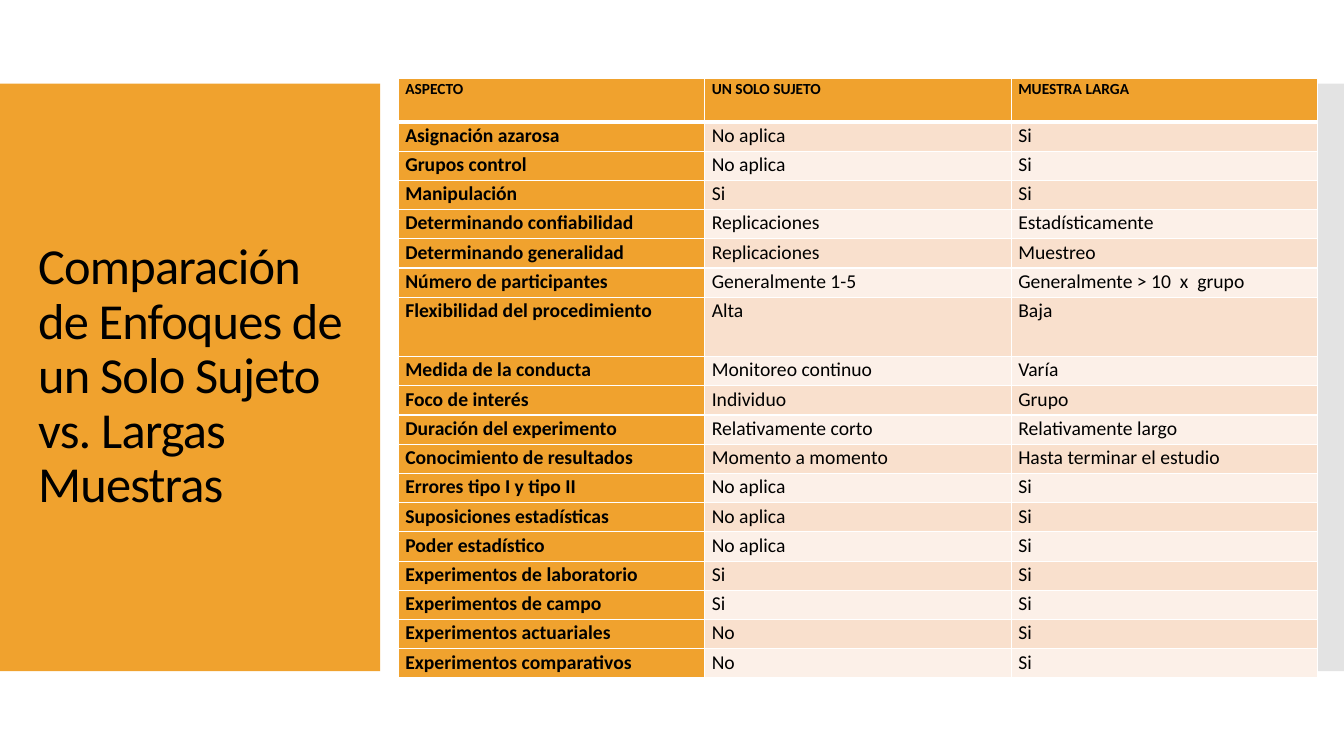
from lxml import etree
from pptx import Presentation
from pptx.dml.color import RGBColor
from pptx.enum.shapes import MSO_SHAPE
from pptx.enum.text import MSO_ANCHOR
from pptx.oxml.ns import qn
from pptx.util import Emu, Pt

RECT = MSO_SHAPE.RECTANGLE
MIDDLE = MSO_ANCHOR.MIDDLE
TOP = MSO_ANCHOR.TOP
PX = 9144
BLANK = 6

TITLE = "Comparación de Enfoques de un Solo Sujeto vs. Largas Muestras"
ROWS = [
    ("ASPECTO", "UN SOLO SUJETO", "MUESTRA LARGA"),
    ("Asignación azarosa", "No aplica", "Si"),
    ("Grupos control", "No aplica", "Si"),
    ("Manipulación", "Si", "Si"),
    ("Determinando confiabilidad", "Replicaciones", "Estadísticamente"),
    ("Determinando generalidad", "Replicaciones", "Muestreo"),
    ("Número de participantes", "Generalmente 1-5", "Generalmente > 10  x  grupo"),
    ("Flexibilidad del procedimiento", "Alta", "Baja"),
    ("Medida de la conducta", "Monitoreo continuo", "Varía"),
    ("Foco de interés", "Individuo", "Grupo"),
    ("Duración del experimento", "Relativamente corto", "Relativamente largo"),
    ("Conocimiento de resultados", "Momento a momento", "Hasta terminar el estudio"),
    ("Errores tipo I y tipo II", "No aplica", "Si"),
    ("Suposiciones estadísticas", "No aplica", "Si"),
    ("Poder estadístico", "No aplica", "Si"),
    ("Experimentos de laboratorio", "Si", "Si"),
    ("Experimentos de campo", "Si", "Si"),
    ("Experimentos actuariales", "No", "Si"),
    ("Experimentos comparativos", "No", "Si"),
]
HEADER_HEIGHT, ROW_HEIGHT, TALL_HEIGHT = 43, 29, 59
TALL_ROW = 7


def px(n):
    return Emu(n * PX)


def rgb(code):
    return RGBColor.from_string(code)


def write(tf, text, font, color, size, bold=False, line=1.0, after=0, spacing=None):
    p = tf.paragraphs[0]
    p.line_spacing = line
    p.space_after = Pt(after)
    r = p.add_run()
    r.text = text
    r.font.name = font
    r.font.size = Pt(size)
    r.font.bold = bold
    r.font.color.rgb = rgb(color)
    if spacing is not None:
        r.font._element.set("spc", str(spacing))


class Deck:
    font = "Calibri"
    ink = "000000"
    accent = "F0A22E"
    edge = "FFFFFF"
    bands = ("FCF0E8", "F9E0CD")

    def __init__(self, prs):
        self.s = prs.slides.add_slide(prs.slide_layouts[BLANK])

    def panel(self, x, y, w, h, color, opacity=100):
        sp = self.s.shapes.add_shape(RECT, px(x), px(y), px(w), px(h))
        sp.shadow.inherit = False
        sp.fill.solid()
        sp.fill.fore_color.rgb = rgb(color)
        sp.line.fill.background()
        if opacity < 100:
            clr = sp._element.spPr.find(qn("a:solidFill"))[0]
            etree.SubElement(clr, qn("a:alpha"), val=str(opacity * 1000))

    def title(self, x, y, w, h, text):
        tf = self.s.shapes.add_textbox(px(x), px(y), px(w), px(h)).text_frame
        tf.word_wrap = True
        tf.vertical_anchor = MIDDLE
        write(tf, text, self.font, self.ink, 36, line=0.9, spacing=-60)

    def border(self, cell, side, width):
        tag = qn(f"a:ln{side}")
        ln = etree.SubElement(cell._tc.get_or_add_tcPr(), tag, w=str(Pt(width)))
        fill = etree.SubElement(ln, qn("a:solidFill"))
        etree.SubElement(fill, qn("a:srgbClr"), val=self.edge)

    def cell(self, cell, text, row, col):
        cell.margin_left = cell.margin_right = px(7)
        cell.margin_top = cell.margin_bottom = 0
        cell.vertical_anchor = TOP
        for side in "LRTB":
            heavy = (side, row) in (("B", 0), ("T", 1))
            self.border(cell, side, 3 if heavy else 1)
        strong = row == 0 or col == 0
        cell.fill.solid()
        cell.fill.fore_color.rgb = rgb(self.accent if strong else self.bands[row % 2])
        write(cell.text_frame, text, self.font, self.ink, 14 if row else 11,
              bold=strong, line=1.07, after=8)

    def table(self, x, y, col_width, heights, rows):
        cols = len(rows[0])
        frame = self.s.shapes.add_table(len(rows), cols, px(x), px(y),
                                        px(col_width * cols), px(sum(heights)))
        tbl = frame.table
        for column in tbl.columns:
            column.width = px(col_width)
        for i, (height, texts) in enumerate(zip(heights, rows)):
            tbl.rows[i].height = px(height)
            for j, text in enumerate(texts):
                self.cell(tbl.cell(i, j), text, i, j)


def main():
    prs = Presentation()
    prs.slide_width, prs.slide_height = px(1333), px(750)
    deck = Deck(prs)
    deck.panel(0, 83, 377, 583, deck.accent)
    deck.panel(1292, 83, 41, 583, "C8C8C8", opacity=50)
    deck.title(28, 123, 322, 503, TITLE)
    heights = [HEADER_HEIGHT] + [ROW_HEIGHT] * (len(ROWS) - 1)
    heights[TALL_ROW] = TALL_HEIGHT
    deck.table(395, 78, 304, heights, ROWS)
    prs.save("out.pptx")


if __name__ == "__main__":
    main()
